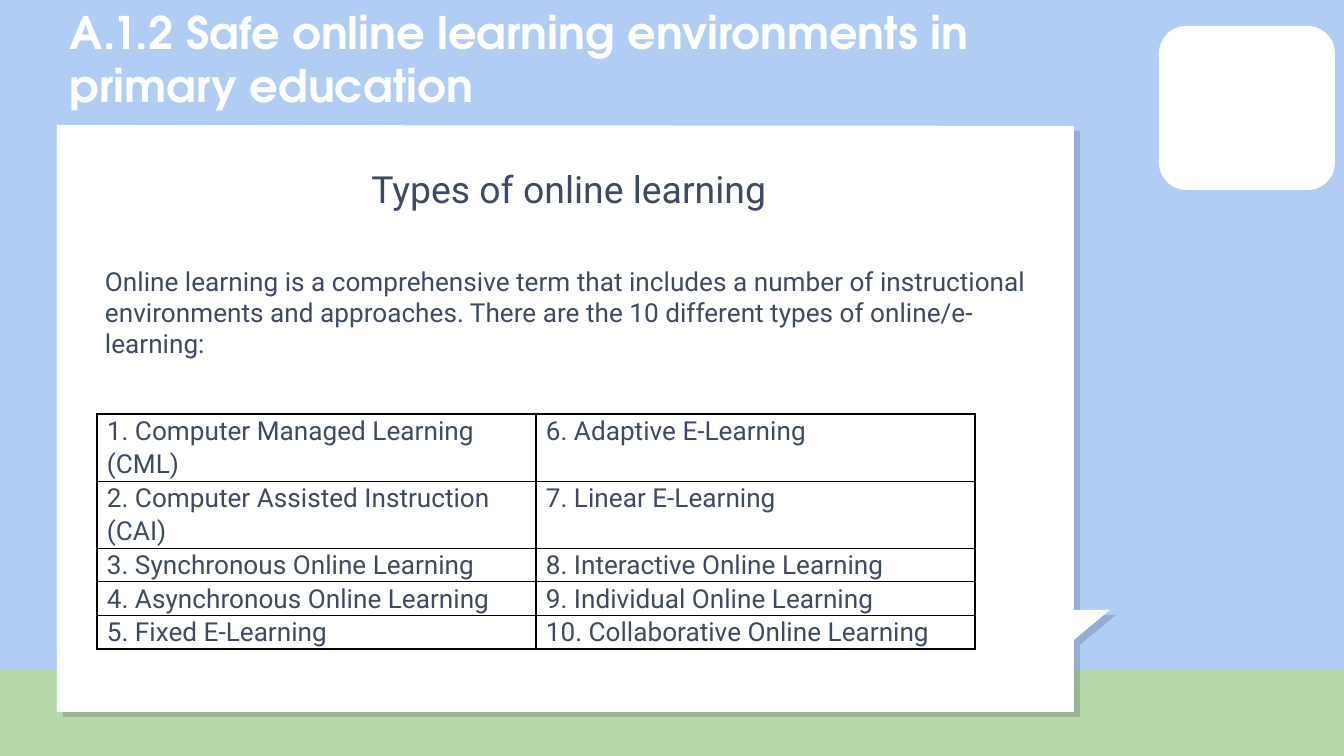
"""Builds the slide on types of online learning."""
from typing import NamedTuple

from lxml import etree
from pptx import Presentation
from pptx import util as u
from pptx.dml.color import RGBColor
from pptx.enum import shapes, text
from pptx.oxml import ns

PX = 914400 / 134.4
SKY = RGBColor(0xB1, 0xCD, 0xF4)
GRASS = RGBColor(0xB6, 0xD7, 0xA8)
WHITE = RGBColor(0xFF, 0xFF, 0xFF)
SHADE = RGBColor(0x0D, 0x01, 0x38)
INK = RGBColor(0x3E, 0x4A, 0x63)
BLACK = RGBColor(0, 0, 0)
BODY_FONT, TITLE_FONT = "Roboto", "TeX Gyre Adventor"

BUBBLE = [(57, 125), (57, 712), (1074, 712), (1074, 640), (1110, 610), (1074, 610), (1074, 126)]
TYPES = [
    "Computer Managed Learning (CML)",
    "Computer Assisted Instruction (CAI)",
    "Synchronous Online Learning",
    "Asynchronous Online Learning",
    "Fixed E-Learning",
    "Adaptive E-Learning",
    "Linear E-Learning",
    "Interactive Online Learning",
    "Individual Online Learning",
    "Collaborative Online Learning",
]
ROW_HEIGHTS = [66, 66, 33, 33, 33]
COL_WIDTH = 439


class Box(NamedTuple):
    x: int
    y: int
    w: int
    h: int


class Para(NamedTuple):
    content: str
    size: int
    color: RGBColor = INK
    font: str = BODY_FONT
    bold: bool = False
    align: text.PP_ALIGN = text.PP_ALIGN.LEFT
    before: int = 0
    spacing: float = 1.0


def px(n: float) -> int:
    return round(n * PX)


def emu(box: Box) -> list[int]:
    return [px(n) for n in box]


def paint(sp, color: RGBColor) -> None:
    sp.shadow.inherit = False
    sp.fill.solid()
    sp.fill.fore_color.rgb = color
    sp.line.fill.background()


def add_panel(s, kind: shapes.MSO_SHAPE, box: Box, color: RGBColor) -> None:
    paint(s.shapes.add_shape(kind, *emu(box)), color)


def add_bubble(s, dx: int, dy: int, color: RGBColor):
    points = [(x + dx, y + dy) for x, y in BUBBLE]
    builder = s.shapes.build_freeform(*points[0], scale=PX)
    builder.add_line_segments(points[1:], close=True)
    sp = builder.convert_to_shape()
    paint(sp, color)
    return sp


def set_alpha(sp, percent: int) -> None:
    color = sp.fill._xPr.find(f".//{ns.qn('a:srgbClr')}")
    etree.SubElement(color, ns.qn("a:alpha"), val=str(percent * 1000))


def write(tf, paras: list[Para]) -> None:
    for i, item in enumerate(paras):
        p = tf.add_paragraph() if i else tf.paragraphs[0]
        p.text = item.content
        p.alignment = item.align
        p.space_before = u.Pt(item.before)
        p.line_spacing = item.spacing
        for r in p.runs:
            r.font.name, r.font.size, r.font.bold = item.font, u.Pt(item.size), item.bold
            r.font.color.rgb = item.color


def add_text(s, box: Box, paras: list[Para], anchor: text.MSO_ANCHOR, left: int = 13) -> None:
    tf = s.shapes.add_textbox(*emu(box)).text_frame
    tf.word_wrap = True
    tf.vertical_anchor = anchor
    tf.margin_left = px(left)
    tf.margin_top = tf.margin_right = tf.margin_bottom = px(13)
    write(tf, paras)


def add_borders(cell) -> None:
    tcPr = cell._tc.get_or_add_tcPr()
    for i, side in enumerate(("lnL", "lnR", "lnT", "lnB")):
        ln = etree.Element(ns.qn(f"a:{side}"), w=str(u.Pt(0.75)))
        fill = etree.SubElement(ln, ns.qn("a:solidFill"))
        etree.SubElement(fill, ns.qn("a:srgbClr"), val=str(BLACK))
        tcPr.insert(i, ln)


def add_types_table(s, x: int, y: int) -> None:
    rows = len(ROW_HEIGHTS)
    box = Box(x, y, 2 * COL_WIDTH, sum(ROW_HEIGHTS))
    table = s.shapes.add_table(rows, 2, *emu(box)).table
    table.first_row = table.horz_banding = False
    for col in table.columns:
        col.width = px(COL_WIDTH)
    for row, height in zip(table.rows, ROW_HEIGHTS):
        row.height = px(height)
    for i, name in enumerate(TYPES):
        cell = table.cell(i % rows, i // rows)
        cell.margin_left = cell.margin_right = px(10)
        cell.margin_top = cell.margin_bottom = 0
        cell.fill.background()
        add_borders(cell)
        write(cell.text_frame, [Para(f"{i + 1}. {name}", 14, spacing=1.07)])


def main() -> None:
    prs = Presentation()
    prs.slide_width, prs.slide_height = px(1344), px(756)
    s = prs.slides.add_slide(prs.slide_layouts[6])
    s.background.fill.solid()
    s.background.fill.fore_color.rgb = SKY

    add_panel(s, shapes.MSO_SHAPE.RECTANGLE, Box(0, 670, 1344, 86), GRASS)
    set_alpha(add_bubble(s, 6, 5, SHADE), 16)
    add_bubble(s, 0, 0, WHITE)
    add_panel(s, shapes.MSO_SHAPE.ROUNDED_RECTANGLE, Box(1159, 26, 176, 164), WHITE)

    title = "A.1.2 Safe online learning environments in primary education"
    add_text(s, Box(57, 0, 1017, 125), [Para(title, 24, WHITE, TITLE_FONT, True)],
             text.MSO_ANCHOR.BOTTOM)
    intro = ("Online learning is a comprehensive term that includes a number of instructional "
             "environments and approaches. There are the 10 different types of online/e-learning:")
    add_text(s, Box(86, 153, 960, 190), [
        Para("Types of online learning", 20, align=text.PP_ALIGN.CENTER),
        Para(intro, 14, before=29),
    ], text.MSO_ANCHOR.TOP, left=19)
    add_types_table(s, 97, 414)
    prs.save("out.pptx")


if __name__ == "__main__":
    main()
